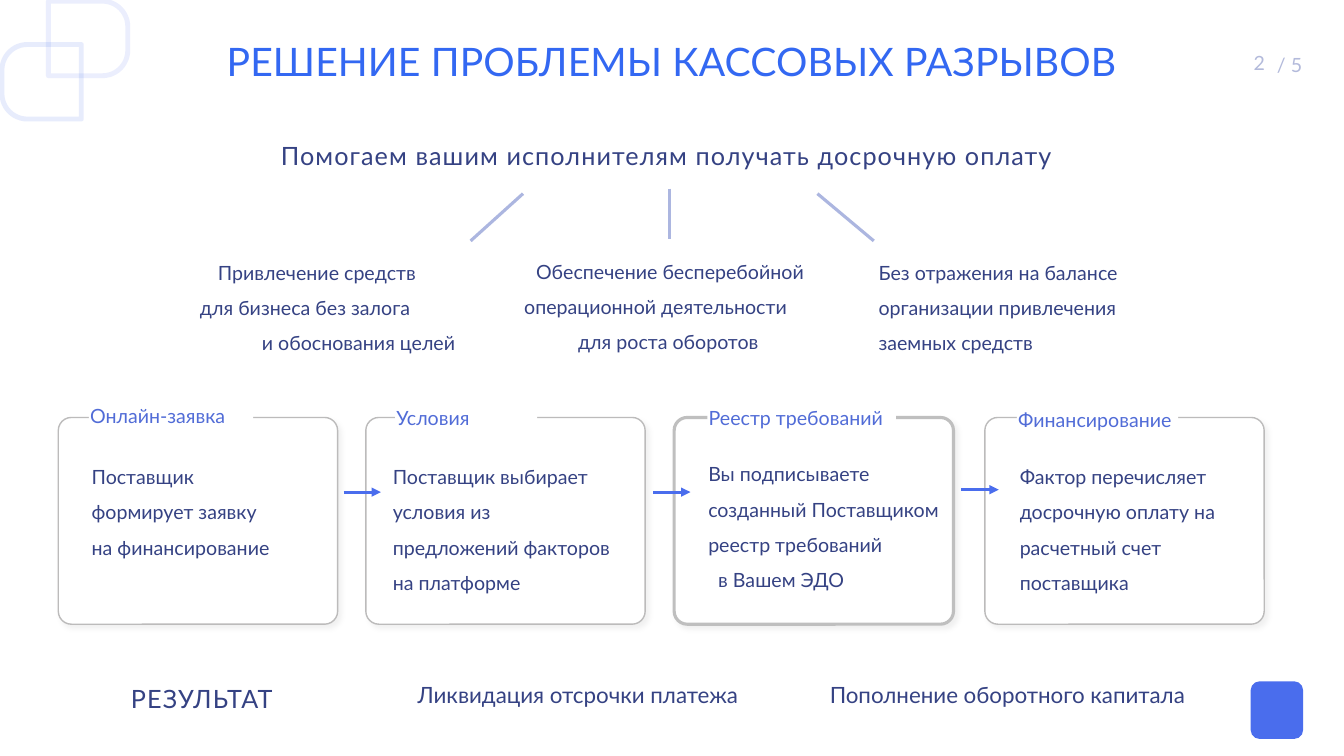
import pptx
import pptx.util
import pptx.oxml
import pptx.dml.color
import pptx.enum.shapes
import pptx.enum.text
from lxml import etree
from pptx.oxml.ns import qn

Cm, Pt = pptx.util.Cm, pptx.util.Pt
rgb = pptx.dml.color.RGBColor.from_string
SHAPE = pptx.enum.shapes.MSO_SHAPE
ALIGN = pptx.enum.text.PP_ALIGN
MIDDLE = pptx.enum.text.MSO_ANCHOR.MIDDLE

NAVY, BLUE, PALE = "354283", "4A6DED", "B3BADB"


def text(sp, lines, size=14, color=NAVY, align=ALIGN.LEFT, spacing=None,
         spc=None, indents=(), anchor=pptx.enum.text.MSO_ANCHOR.TOP):
    """Write one paragraph per line; indents are left margins in cm."""
    tf = sp.text_frame
    tf.word_wrap = True
    tf.vertical_anchor = anchor
    for i, line in enumerate(lines.split("\n")):
        p = tf.paragraphs[0] if i == 0 else tf.add_paragraph()
        p.alignment = align
        if spacing:
            p.line_spacing = spacing
        if indents:
            p._p.get_or_add_pPr().set("marL", str(Cm(indents[i])))
        r = p.add_run()
        r.text = line
        r.font.size, r.font.name = Pt(size), "Lato"
        r.font.color.rgb = rgb(color)
        if spc:
            r.font._element.set("spc", str(spc))


def line(x1, y1, x2, y2, color, arrow=False):
    cn = s.shapes.add_connector(pptx.enum.shapes.MSO_CONNECTOR.STRAIGHT,
                                Cm(x1), Cm(y1), Cm(x2), Cm(y2))
    cn.line.color.rgb = rgb(color)
    cn.line.width = Pt(2.25)
    spPr = cn.element.spPr
    if arrow:
        etree.SubElement(spPr.find(qn("a:ln")), qn("a:tailEnd"), type="triangle")
    etree.SubElement(spPr, qn("a:effectLst"))


prs = pptx.Presentation()
prs.slide_width, prs.slide_height = Cm(33.87), Cm(19.05)
s = prs.slides.add_slide(prs.slide_layouts[6])

# Corner ornament
for x, y, turn, alpha in [(0.11, 1.06, 270, 13000), (1.28, -0.03, 90, 11000)]:
    sp = s.shapes.add_shape(SHAPE.ROUND_2_SAME_RECTANGLE, Cm(x), Cm(y), Cm(1.88), Cm(2))
    sp.adjustments[0] = 0.34
    sp.rotation = turn
    sp.shadow.inherit = False
    sp.fill.background()
    sp.line.color.rgb = rgb(BLUE)
    sp.line.width = Pt(3.5)
    tint = sp.element.spPr.find(qn("a:ln")).find(".//" + qn("a:srgbClr"))
    etree.SubElement(tint, qn("a:alpha"), val=str(alpha))

# Emblem placeholder
sp = s.shapes.add_shape(SHAPE.ROUNDED_RECTANGLE, Cm(31.52), Cm(17.17), Cm(1.32), Cm(1.45))
sp.shadow.inherit = False
sp.fill.solid()
sp.fill.fore_color.rgb = rgb(BLUE)
sp.line.fill.background()

# Page number, title, benefits and results
body = dict(spacing=1.5)
wide = dict(size=18, spacing=1.5, spc=80)
result = dict(size=16, align=ALIGN.CENTER)
texts = [
    (31.93, 1.02, 1.9, 0.94, "/ 5", dict(color=PALE, spacing=1.3)),
    (24.51, 1.07, 7.62, 1.02, "2", dict(color=PALE, align=ALIGN.RIGHT, anchor=MIDDLE)),
    (0, 0.46, 33.87, 2.29, "РЕШЕНИЕ ПРОБЛЕМЫ КАССОВЫХ РАЗРЫВОВ",
     dict(size=28, color="3368F2", align=ALIGN.CENTER, spacing=0.9, spc=10, anchor=MIDDLE)),
    (3.66, 3.02, 26.29, 1.42, "Помогаем вашим исполнителям получать досрочную оплату",
     dict(wide, align=ALIGN.CENTER)),
    (4.55, 6.15, 7.19, 2.95,
     "Привлечение средств\nдля бизнеса без залога\nи обоснования целей",
     dict(body, indents=(0.69, 0.24, 1.8))),
    (12.88, 6.12, 8, 2.84,
     "Обеспечение бесперебойной\nоперационной деятельности\nдля роста оборотов",
     dict(body, indents=(0.38, 0.08, 1.44))),
    (21.89, 6.15, 8.86, 2.95,
     "Без отражения на балансе организации привлечения\nзаемных средств", body),
    (3.05, 16.71, 6.6, 1.24, "РЕЗУЛЬТАТ", wide),
    (9.75, 17.04, 9.63, 0.94, "Ликвидация отсрочки платежа", result),
    (19.89, 17.04, 11, 0.94, "Пополнение оборотного капитала", result),
]
for x, y, w, h, words, fmt in texts:
    text(s.shapes.add_textbox(Cm(x), Cm(y), Cm(w), Cm(h)), words, **fmt)

# Rays from the subtitle to the benefits
for ray in [(16.87, 4.75, 16.87, 6.02), (13.18, 4.88, 11.86, 6.07),
            (20.6, 4.88, 22.02, 6.07)]:
    line(*ray, "ACB6E0")

# Step cards: card x, border, label (x, y, w, text), body (x, y, w, text, indents)
cards = [
    (1.47, "BCBBBB", 1, (2.24, 10.13, 4.14, "Онлайн-заявка"),
     (2.06, 11.3, 5.11, "Поставщик формирует заявку на финансирование", ())),
    (9.22, "BCBBBB", 1, (9.96, 10.16, 3.58, "Условия"),
     (9.65, 11.3, 6.17, "Поставщик выбирает условия из предложений факторов на платформе", ())),
    (16.99, "BFBFBF", 2.25, (17.83, 10.16, 4.75, "Реестр требований"),
     (17.6, 11.23, 6.5,
      "Вы подписываете созданный Поставщиком реестр требований\nв Вашем ЭДО", (0, 0.25))),
    (24.82, "BCBBBB", 1, (25.63, 10.21, 4.06, "Финансирование"),
     (25.45, 11.3, 6.4, "Фактор перечисляет досрочную оплату на расчетный счет поставщика", ())),
]
for card_x, border, weight, (lx, ly, lw, label), (bx, by, bw, words, indents) in cards:
    sp = s.shapes.add_shape(SHAPE.ROUNDED_RECTANGLE, Cm(card_x), Cm(10.52), Cm(7.04), Cm(5.21))
    sp.adjustments[0] = 0.063
    sp.fill.solid()
    sp.fill.fore_color.rgb = rgb("FFFFFF")
    sp.line.color.rgb = rgb(border)
    sp.line.width = Pt(weight)
    sp.shadow.inherit = False
    shadow = etree.SubElement(sp.element.spPr.find(qn("a:effectLst")), qn("a:outerShdw"),
                              blurRad=str(Pt(4)), dist=str(Pt(3)), dir="2700000",
                              algn="tl", rotWithShape="0")
    black = etree.SubElement(shadow, qn("a:srgbClr"), val="000000")
    etree.SubElement(black, qn("a:alpha"), val="5000")

    # Label covering the top border
    sp = s.shapes.add_shape(SHAPE.RECTANGLE, Cm(lx), Cm(ly), Cm(lw), Cm(0.64))
    sp.shadow.inherit = False
    sp.fill.solid()
    sp.fill.fore_color.rgb = rgb("FFFFFF")
    sp.line.fill.background()
    tf = sp.text_frame
    tf.margin_left, tf.margin_top = Cm(0.03), Cm(0.06)
    tf.margin_right = tf.margin_bottom = 0
    text(sp, label, color="516CD7")

    text(s.shapes.add_textbox(Cm(bx), Cm(by), Cm(bw), Cm(3.84)), words,
         spacing=1.5, indents=indents)

# Arrows between the cards
for x, y in [(8.66, 12.4), (16.46, 12.4), (24.23, 12.34)]:
    line(x, y, x + 0.94, y, BLUE, arrow=True)

prs.save("out.pptx")
